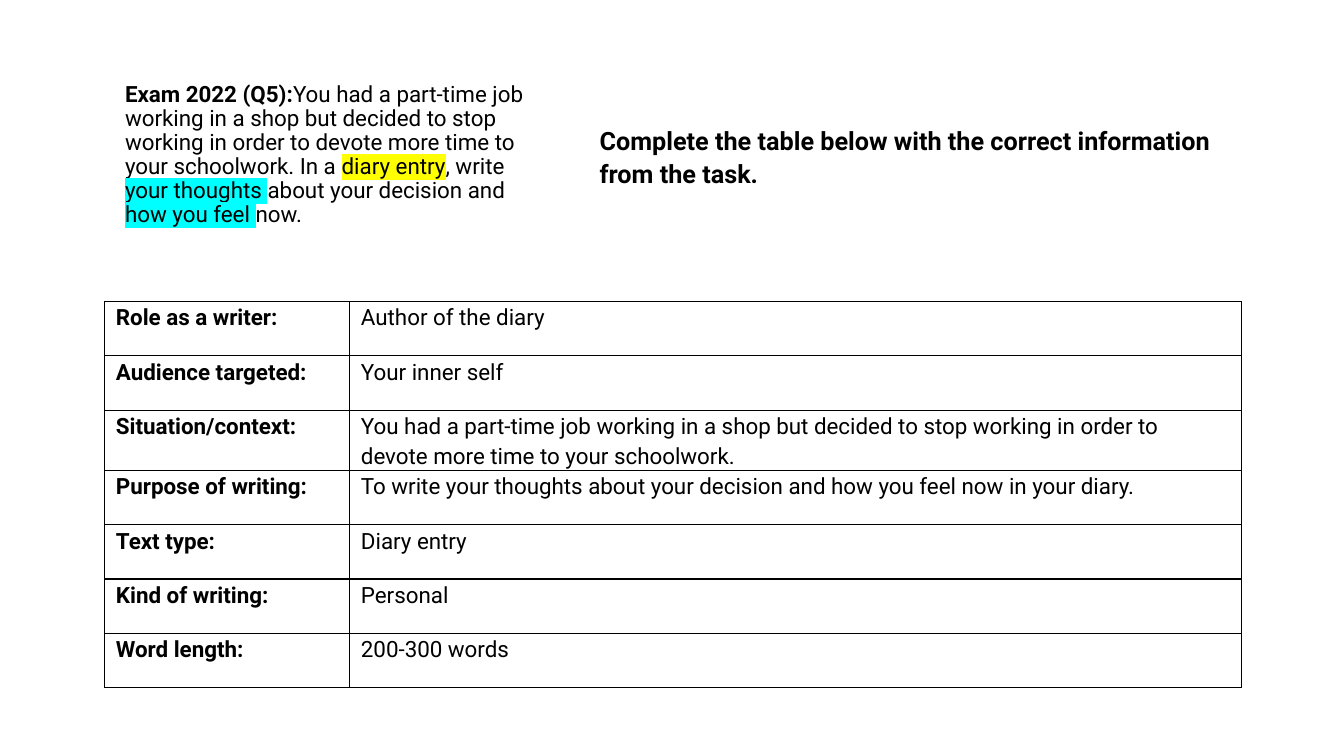
from lxml.etree import SubElement
from pptx import Presentation
from pptx.dml.color import RGBColor as Rgb
from pptx.enum.text import MSO_ANCHOR as Anchor, MSO_AUTO_SIZE as AutoSize, PP_ALIGN as Align
from pptx.oxml import parse_xml
from pptx.oxml.ns import nsdecls, qn
from pptx.util import Inches, Pt

FONT = "Roboto"
COLORS = {"ink": "000000", "format": "FFFF00", "content": "00FFFF"}
SLIDE_WIDTH, SLIDE_HEIGHT = 13.33, 7.5
HEADER_TOP, HEADER_HEIGHT = 0.64, 1.8
TABLE_LEFT, TABLE_TOP = 1.04, 2.99
COLUMN_WIDTHS = (2.43, 8.84)
ROW_HEIGHT = 0.54

TASK = (
    ("Exam 2022 (Q5):", True, None),
    ("You had a part-time job working in a shop but decided to stop working "
     "in order to devote more time to your schoolwork. In a ", False, None),
    ("diary entry", False, "format"),
    (", write ", False, None),
    ("your thoughts ", False, "content"),
    ("about your decision and ", False, None),
    ("how you feel ", False, "content"),
    ("now.", False, None),
)
INSTRUCTION = "Complete the table below with the correct information from the task."
ANSWERS = (
    ("Role as a writer:", "Author of the diary"),
    ("Audience targeted:", "Your inner self"),
    ("Situation/context:", "You had a part-time job working in a shop but decided to stop "
     "working in order to devote more time to your schoolwork."),
    ("Purpose of writing:", "To write your thoughts about your decision and how you feel "
     "now in your diary."),
    ("Text type:", "Diary entry"),
    ("Kind of writing:", "Personal"),
    ("Word length:", "200-300 words"),
)


def header_box(left, width):
    return [Inches(n) for n in (left, HEADER_TOP, width, HEADER_HEIGHT)]


def add_run(paragraph, words, size, bold, marker=None):
    run = paragraph.add_run()
    run.text = words
    run.font.size, run.font.bold = Pt(size), bold
    run.font.color.rgb = Rgb.from_string(COLORS["ink"])
    run.font.name = FONT
    if marker:
        latin = run.font._element.find(qn("a:latin"))
        highlight = parse_xml(f'<a:highlight {nsdecls("a")}/>')
        SubElement(highlight, qn("a:srgbClr"), val=COLORS[marker])
        latin.addprevious(highlight)


def format_frame(frame):
    frame.word_wrap = True
    frame.auto_size = AutoSize.NONE
    frame.vertical_anchor = Anchor.MIDDLE


def space(paragraph, line, before=0, after=0):
    paragraph.alignment = Align.LEFT
    paragraph.line_spacing = line
    paragraph.space_before, paragraph.space_after = Pt(before), Pt(after)


def fill_task(title):
    title.left, title.top, title.width, title.height = header_box(1.14, 4.19)
    format_frame(title.text_frame)
    paragraph = title.text_frame.paragraphs[0]
    space(paragraph, 0.9)
    for words, bold, marker in TASK:
        add_run(paragraph, words, 16, bold, marker)


def add_instruction(slide):
    frame = slide.shapes.add_textbox(*header_box(5.85, 6.56)).text_frame
    format_frame(frame)
    space(frame.paragraphs[0], 1.1, after=6)
    add_run(frame.paragraphs[0], INSTRUCTION, 18, True)


def draw_borders(cell):
    properties = cell._tc.get_or_add_tcPr()
    for position, side in enumerate(("lnL", "lnR", "lnT", "lnB")):
        properties.insert(position, parse_xml(
            f'<a:{side} {nsdecls("a")} w="{Pt(1)}"><a:solidFill>'
            f'<a:srgbClr val="{COLORS["ink"]}"/></a:solidFill></a:{side}>'))


def fill_cell(cell, words, bold):
    cell.margin_left = cell.margin_right = Inches(0.11)
    cell.margin_top = cell.margin_bottom = 0
    cell.fill.background()
    draw_borders(cell)
    paragraph = cell.text_frame.paragraphs[0]
    space(paragraph, 1.15, 12, 6)
    add_run(paragraph, words, 16, bold)


def add_answers(slide):
    table = slide.shapes.add_table(
        len(ANSWERS), len(COLUMN_WIDTHS), Inches(TABLE_LEFT), Inches(TABLE_TOP),
        Inches(sum(COLUMN_WIDTHS)), Inches(ROW_HEIGHT * len(ANSWERS))).table
    table.first_row = table.horz_banding = False
    for column, width in zip(table.columns, COLUMN_WIDTHS):
        column.width = Inches(width)
    for row, answer in zip(table.rows, ANSWERS):
        row.height = Inches(ROW_HEIGHT)
        for index, words in enumerate(answer):
            fill_cell(row.cells[index], words, bold=index == 0)


def main():
    deck = Presentation()
    deck.slide_width, deck.slide_height = Inches(SLIDE_WIDTH), Inches(SLIDE_HEIGHT)
    slide = deck.slides.add_slide(deck.slide_layouts[5])
    fill_task(slide.shapes.title)
    add_answers(slide)
    add_instruction(slide)
    deck.save("out.pptx")


main()
